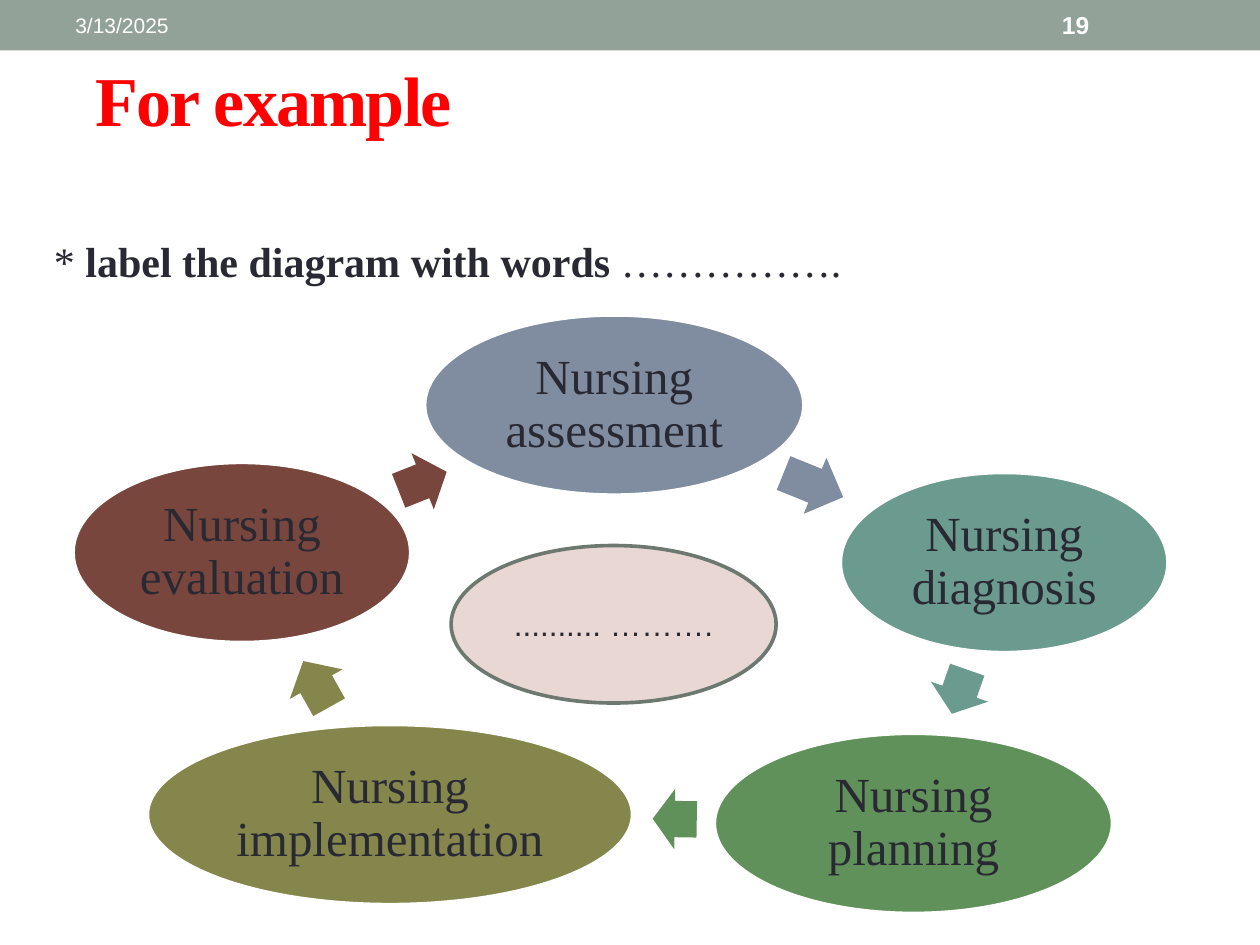
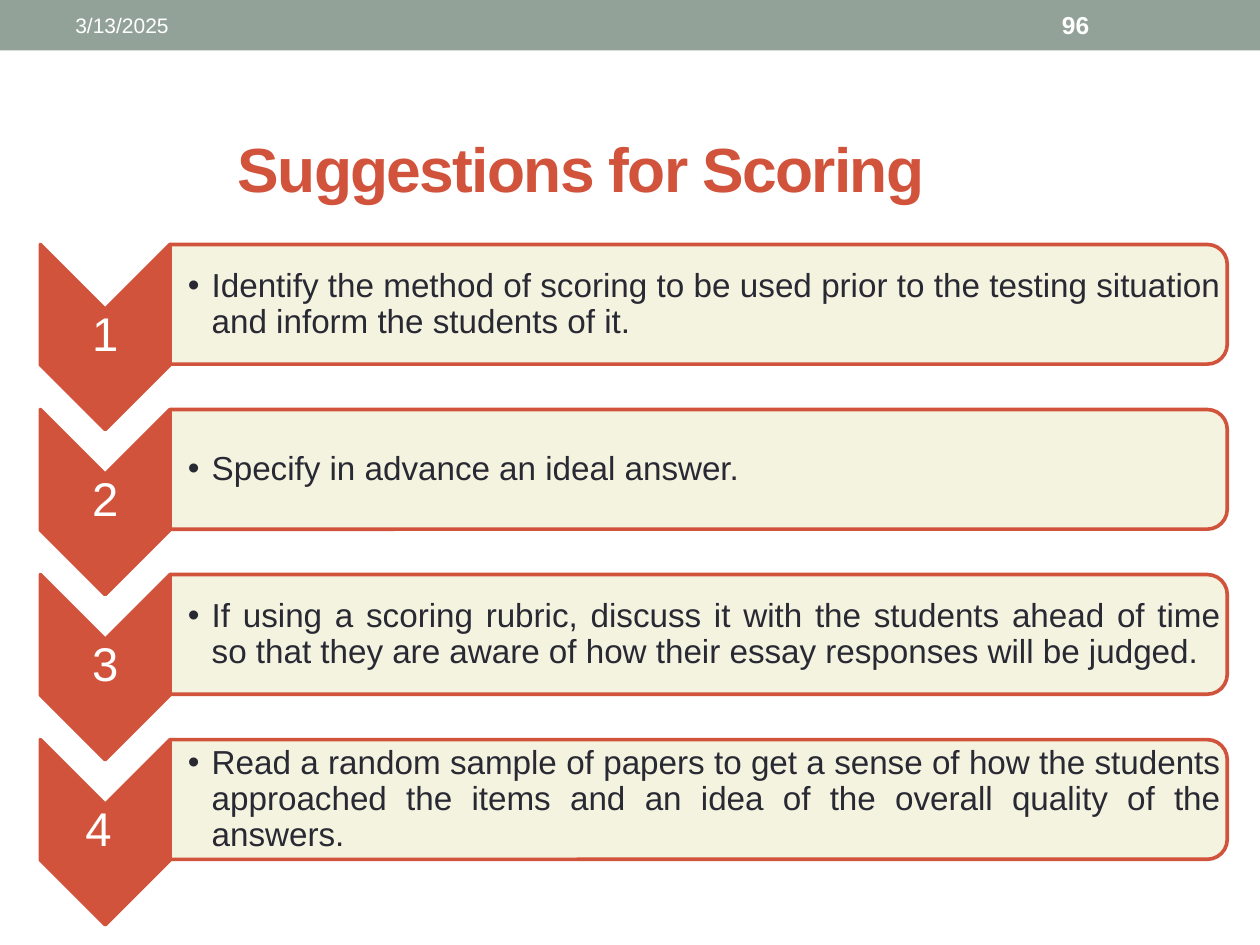
from pptx import Presentation
from pptx import util as u
from pptx.dml.color import RGBColor
from pptx.enum import shapes, text
from pptx.oxml.ns import qn
from lxml import etree

SANS, SERIF = "Arial", "Times New Roman"
INK, WHITE, RED = "292934", "FFFFFF", "D2533C"
BAND, CREAM = "93A299", "F3F2DC"
LEFT, MID, FULL = text.PP_ALIGN.LEFT, text.PP_ALIGN.CENTER, text.PP_ALIGN.JUSTIFY
KIND = shapes.MSO_SHAPE
EDGE = 2.08

# Step name, ellipse place, colour, then place and turn of the arrow after it
STEPS = [
    ("assessment", (3.37, 2.5, 3.01), "808DA0", (6.2, 3.61, 0.51), 22),
    ("diagnosis", (6.67, 3.75, 2.6), "6B9A8E", (7.43, 5.25, 0.37), 109.3),
    ("planning", (5.67, 5.82, 3.16), "61915A", (5.18, 6.26, 0.35), 180.9),
    ("implementation", (1.17, 5.75, 3.85), "85864B", (2.3, 5.19, 0.42), 240.8),
    ("evaluation", (0.58, 3.67, 2.68), "79463D", (3.15, 3.58, 0.41), 338.4),
]
TIPS = [
    ("1", "Identify the method of scoring to be used prior to the testing "
          "situation and inform the students of it. "),
    ("2", "Specify in advance an ideal answer."),
    ("3", "If using a scoring rubric, discuss it with the students ahead of time "
          "so that they are aware of how their essay responses will be judged. "),
    ("4 ", "Read a random sample of papers to get a sense of how the students "
           "approached the items and an idea of the overall quality of the answers."),
]


def hue(code):
    return RGBColor.from_string(code)


def inch(*sizes):
    return [u.Inches(s) for s in sizes]


def add_run(para, words, size, color=INK, font=SANS, bold=False):
    run = para.add_run()
    run.text = words
    run.font.size, run.font.name, run.font.bold = u.Pt(size), font, bold
    run.font.color.rgb = hue(color)
    return run


def set_frame(shape, align=LEFT, anchor=text.MSO_ANCHOR.MIDDLE, pads=None, space=None):
    """Prepare the text frame and return its first paragraph."""
    frame = shape.text_frame
    frame.word_wrap = True
    frame.auto_size = text.MSO_AUTO_SIZE.NONE
    frame.vertical_anchor = anchor
    if pads:
        (frame.margin_left, frame.margin_top,
         frame.margin_right, frame.margin_bottom) = inch(*pads)
    para = frame.paragraphs[0]
    para.alignment = align
    if space:
        para.line_spacing = space
    return para


def add_form(slide, kind, box, fill, line=None):
    form = slide.shapes.add_shape(kind, *inch(*box))
    form.shadow.inherit = False
    form.fill.solid()
    form.fill.fore_color.rgb = hue(fill)
    if line:
        form.line.color.rgb = hue(line)
        form.line.width = u.Pt(EDGE)
    else:
        form.line.fill.background()
    return form


def add_turned(slide, kind, box, fill, line):
    """Add a shape turned by 90 degrees that covers the given box."""
    x, y, w, h = box
    form = add_form(slide, kind, (x + (w - h) / 2, y + (h - w) / 2, h, w), fill, line)
    form.rotation = 90
    return form


def add_box(slide, box, **style):
    return set_frame(slide.shapes.add_textbox(*inch(*box)), **style)


def add_slide(prs, title, box, number, size, align=LEFT, **look):
    """Add a slide with its top band, date, page number and title."""
    slide = prs.slides.add_slide(prs.slide_layouts[5])
    add_form(slide, KIND.RECTANGLE, (0, 0, 10, 0.4), BAND)
    add_run(add_box(slide, (0.5, 0.02, 3.17, 0.36)), "3/13/2025", 12, WHITE)
    add_run(add_box(slide, (8.33, 0.02, 1.17, 0.36)), number, 14, WHITE, bold=True)
    head = slide.shapes.title
    head.left, head.top, head.width, head.height = inch(*box)
    run = add_run(set_frame(head, align), title, size, bold=True, **look)
    run.font._element.set("spc", "-100")
    return slide


def add_step(slide, name, spot, color, place, turn):
    """Add one step of the ring and the arrow that leaves it."""
    oval = add_form(slide, KIND.OVAL, (*spot, 1.43), color, WHITE)
    para = set_frame(oval, MID, pads=[0.04] * 4, space=0.9)
    add_run(para, "Nursing " + name, 28, font=SERIF)
    arrow = add_form(slide, KIND.RIGHT_ARROW, (*place, 0.48), color)
    arrow.adjustments[0], arrow.adjustments[1] = 0.6, 0.5
    arrow.rotation = turn


def add_dot(para):
    props = para._p.get_or_add_pPr()
    props.set("marL", str(u.Inches(0.19)))
    props.set("indent", str(u.Inches(-0.19)))
    etree.SubElement(props, qn("a:buFont")).set("typeface", SANS)
    etree.SubElement(props, qn("a:buChar")).set("char", "•")


def add_tip(slide, top, mark, words):
    """Add a numbered chevron with its bar of advice."""
    add_turned(slide, KIND.CHEVRON, (0.32, top, 1.03, 1.47), RED, RED)
    para = add_box(slide, (0.32, top + 0.51, 1.03, 0.44), align=MID,
                   pads=[0.02] * 4, space=0.9)
    add_run(para, mark, 27, WHITE)

    bar = add_turned(slide, KIND.ROUND_2_SAME_RECTANGLE,
                     (1.35, top, 8.39, 0.95), CREAM, RED)
    tint = bar._element.spPr.find(qn("a:solidFill"))[0]
    etree.SubElement(tint, qn("a:alpha")).set("val", "90000")
    para = add_box(slide, (1.35, top + 0.05, 8.35, 0.86), align=FULL,
                   pads=(0.14, 0.01, 0.01, 0.01), space=0.9)
    add_dot(para)
    add_run(para, words, 19)


def add_ring(prs):
    slide = add_slide(prs, "For example", (0.66, 0.16, 9, 1.25), "19", 40,
                      color="FF0000", font=SERIF)
    # Task line
    para = add_box(slide, (0.33, 1.42, 9.17, 5.92),
                   anchor=text.MSO_ANCHOR.TOP, space=2)
    para.space_before = u.Pt(4.8)
    add_run(para, "* ", 24, font=SERIF)
    add_run(para, "label the diagram with words ", 24, font=SERIF, bold=True)
    add_run(para, "…………….", 24, font=SERIF)
    # Ring of steps around the blank to fill in
    for step in STEPS:
        add_step(slide, *step)
    blank = add_form(slide, KIND.OVAL, (3.58, 4.33, 2.58, 1.25), "E9D7D3", "6D7871")
    add_run(set_frame(blank, MID), ".......... ……….", 18)


def add_list(prs):
    slide = add_slide(prs, "Suggestions for Scoring", (0.14, 0.9, 8.94, 0.86),
                      "96", 35.6, align=MID, color=RED)
    for row, tip in enumerate(TIPS):
        add_tip(slide, 1.94 + 1.31 * row, *tip)


def main():
    prs = Presentation()
    prs.slide_width, prs.slide_height = inch(10, 7.5)
    add_ring(prs)
    add_list(prs)
    prs.save("out.pptx")


if __name__ == "__main__":
    main()
